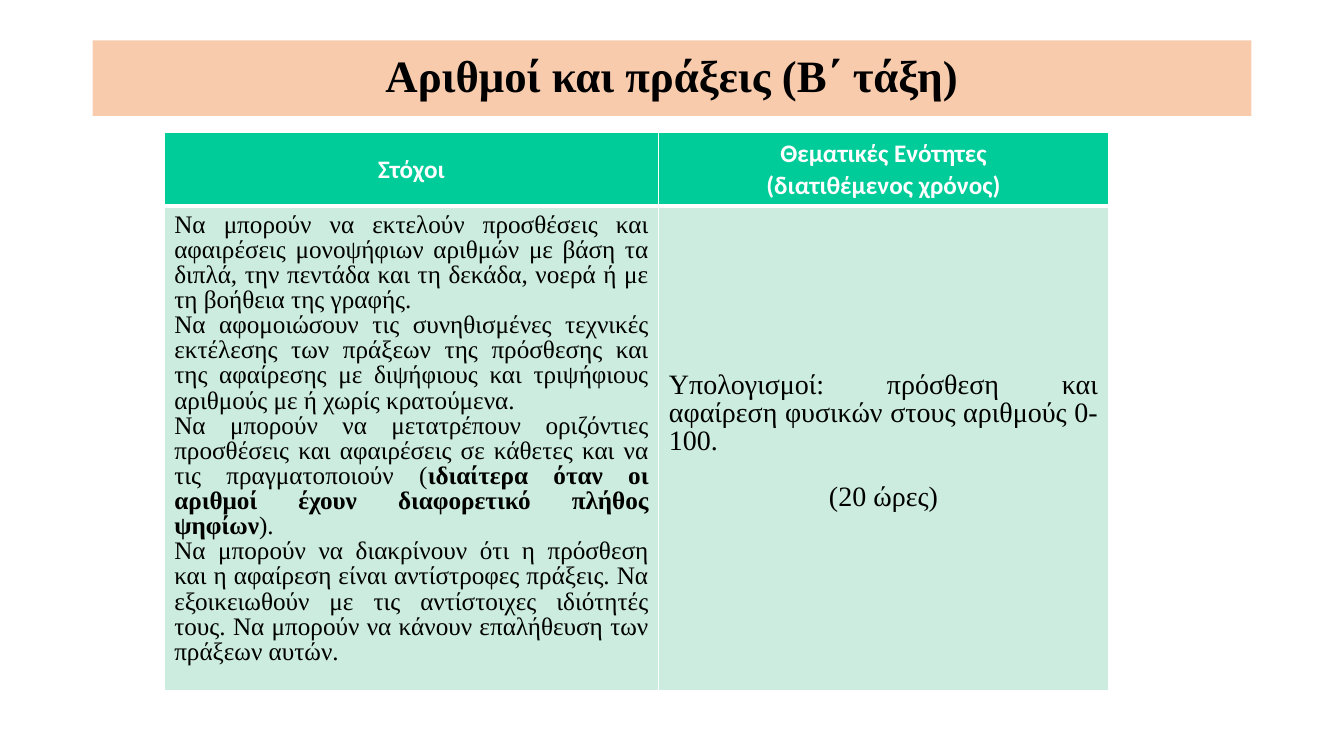
from lxml.etree import SubElement
from pptx import Presentation
from pptx.dml.color import RGBColor
from pptx.enum.text import MSO_ANCHOR, MSO_AUTO_SIZE, PP_ALIGN
from pptx.oxml.ns import qn
from pptx.util import Pt

PX = 9144  # EMU per px, 100 px to the inch

BLACK = RGBColor(0x00, 0x00, 0x00)
WHITE = RGBColor(0xFF, 0xFF, 0xFF)
PEACH = RGBColor(0xF8, 0xCB, 0xAD)
GREEN = RGBColor(0x00, 0xCC, 0x99)
MINT = RGBColor(0xCB, 0xEC, 0xDE)

SERIF = "Times New Roman"
SANS = "Calibri"
THIN, THICK = 0.91, 2.95

HEADERS = (
    ["Στόχοι"],
    ["Θεματικές Ενότητες", "(διατιθέμενος χρόνος)"],
)
# Every second part of a paragraph split at "*" is bold.
GOALS = [
    "Να μπορούν να εκτελούν προσθέσεις και αφαιρέσεις μονοψήφιων αριθμών με βάση "
    "τα διπλά, την πεντάδα και τη δεκάδα, νοερά ή με τη βοήθεια της γραφής.",
    "Να αφομοιώσουν τις συνηθισμένες τεχνικές εκτέλεσης των πράξεων της πρόσθεσης "
    "και της αφαίρεσης με διψήφιους και τριψήφιους αριθμούς με ή χωρίς κρατούμενα.",
    "Να μπορούν να μετατρέπουν οριζόντιες προσθέσεις και αφαιρέσεις σε κάθετες και "
    "να τις πραγματοποιούν (*ιδιαίτερα όταν οι αριθμοί έχουν διαφορετικό πλήθος "
    "ψηφίων*).",
    "Να μπορούν να διακρίνουν ότι η πρόσθεση και η αφαίρεση είναι αντίστροφες "
    "πράξεις. Να εξοικειωθούν με τις αντίστοιχες ιδιότητές τους. Να μπορούν να "
    "κάνουν επαλήθευση των πράξεων αυτών.",
]
UNITS = [
    "Υπολογισμοί: πρόσθεση και αφαίρεση φυσικών στους αριθμούς 0-100.",
    "(20 ώρες)",
]


def format_span(span, size, font, color, bold):
    span.font.size = Pt(size)
    span.font.name = font
    span.font.color.rgb = color
    span.font.bold = bold


def add_title(page, text):
    title = page.shapes.title
    title.left, title.top = 92 * PX, 40 * PX
    title.width, title.height = 1150 * PX, 75 * PX
    title.fill.solid()
    title.fill.fore_color.rgb = PEACH
    frame = title.text_frame
    frame.text = text
    frame.auto_size = MSO_AUTO_SIZE.NONE
    frame.vertical_anchor = MSO_ANCHOR.MIDDLE
    para = frame.paragraphs[0]
    para.alignment = PP_ALIGN.CENTER
    para.line_spacing = 0.9
    format_span(para.runs[0], 32, SERIF, BLACK, True)


def set_borders(cell, top, bottom):
    """Draw white cell borders; top and bottom are widths in points."""
    properties = cell._tc.get_or_add_tcPr()
    sides = (("a:lnL", THIN), ("a:lnR", THIN), ("a:lnT", top), ("a:lnB", bottom))
    for position, (tag, width) in enumerate(sides):
        line = SubElement(properties, qn(tag), w=str(int(Pt(width))))
        fill = SubElement(line, qn("a:solidFill"))
        SubElement(fill, qn("a:srgbClr"), val=str(WHITE))
        properties.insert(position, line)


def fill_cell(cell, texts, fill, size, font, color, align, spacing, bold=False):
    cell.fill.solid()
    cell.fill.fore_color.rgb = fill
    cell.margin_left = cell.margin_right = 10 * PX
    cell.margin_top = cell.margin_bottom = 5 * PX
    frame = cell.text_frame
    for number, text in enumerate(texts):
        para = frame.add_paragraph() if number else frame.paragraphs[0]
        para.alignment = align
        para.line_spacing = spacing
        for index, part in enumerate(text.split("*")):
            span = para.add_run()
            span.text = part
            format_span(span, size, font, color, bold or index % 2 == 1)


def add_goals_table(page):
    table = page.shapes.add_table(2, 2, 163 * PX, 131 * PX, 937 * PX, 552 * PX).table
    for column, width in zip(table.columns, (491, 446)):
        column.width = width * PX
    for row, height in zip(table.rows, (71, 481)):
        row.height = height * PX

    for index, texts in enumerate(HEADERS):
        header = table.cell(0, index)
        fill_cell(header, texts, GREEN, 18, SANS, WHITE, PP_ALIGN.CENTER, 1.04, True)
        header.vertical_anchor = MSO_ANCHOR.MIDDLE
        set_borders(header, THIN, THICK)

    goals, units = table.cell(1, 0), table.cell(1, 1)
    fill_cell(goals, GOALS, MINT, 18, SERIF, BLACK, PP_ALIGN.JUSTIFY, 0.9)
    fill_cell(units, UNITS, MINT, 20, SERIF, BLACK, PP_ALIGN.JUSTIFY, 0.9)
    for cell in (goals, units):
        set_borders(cell, THICK, THIN)
    goals.margin_top = 7 * PX
    units.margin_top = 165 * PX
    hours = units.text_frame.paragraphs[-1]
    hours.alignment = PP_ALIGN.CENTER
    hours.space_before = Pt(20)


def main():
    deck = Presentation()
    deck.slide_width, deck.slide_height = 1334 * PX, 750 * PX
    page = deck.slides.add_slide(deck.slide_layouts.get_by_name("Title Only"))
    add_title(page, "Αριθμοί και πράξεις (B΄ τάξη)")
    add_goals_table(page)
    deck.save("out.pptx")


if __name__ == "__main__":
    main()
